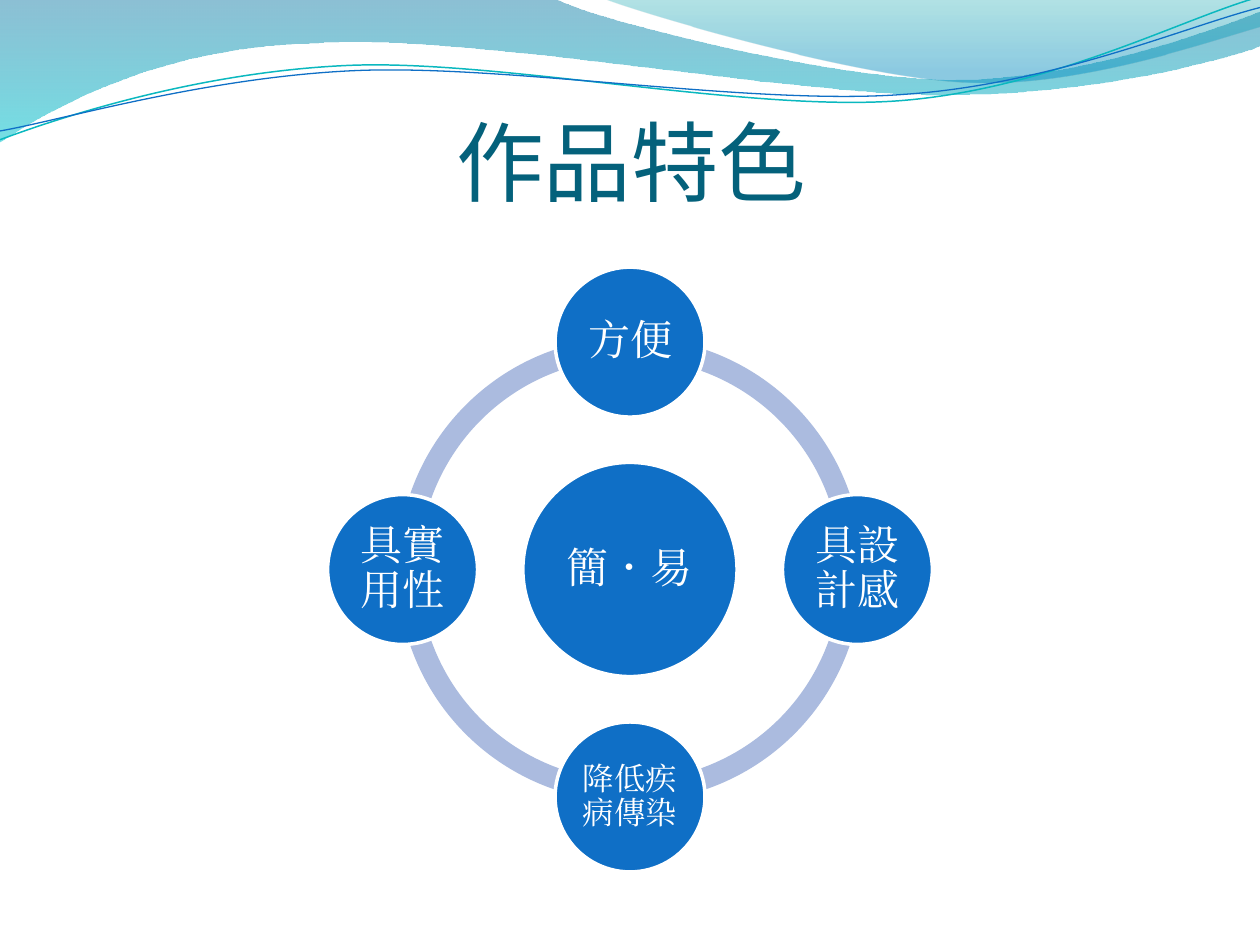
import math

from lxml import etree
from pptx import Presentation
from pptx import util as u
from pptx.dml.color import RGBColor
from pptx.enum import shapes, text
from pptx.oxml import ns

COLORS = {
    "title": "04617B", "node": "0F6FC6", "ring": "ABBBDF", "white": "FFFFFF",
    "teal": "0AB8BF", "wave_top": "0074A1", "wave_bottom": "00C6CF",
    "crest_top": "00A1A9", "crest_bottom": "008BBF",
}
LATIN, CJK = "TeX Gyre Pagella", "Noto Sans CJK SC"
UNITS = 1000  # path units per inch

# Each outline: start point, then lines (x, y) and curves (three points)
WAVE = [(0, 0), (4.4, -0.01), (4.76, 0.17, 6.64, 0.63, 7.58, 0.63),
        (8.53, 0.63, 9.58, 0.26, 10, 0.09), (10.01, 0.36),
        (9.83, 0.44, 8.7, 0.76, 7.46, 0.75), (6.22, 0.75, 3.82, 0.28, 2.57, 0.34),
        (1.29, 0.36, 0.46, 0.83, -0.01, 1.13), (0, 0)]
CREST = [(4.79, -0.01), (5.09, 0.11, 6.82, 0.62, 7.69, 0.65),
         (8.56, 0.69, 9.61, 0.32, 10, 0.21), (10, 0), (4.79, -0.01)]
TEAL_LINE = [(0, 1.11), (0.48, 0.93, 1.58, 0.57, 2.77, 0.52),
             (3.95, 0.47, 5.93, 0.89, 7.13, 0.8), (8.33, 0.71, 9.38, 0.15, 9.98, -0.02)]
BLUE_LINE = [(0, 1.04), (0.47, 0.96, 1.64, 0.61, 2.83, 0.56),
             (4.03, 0.51, 5.97, 0.84, 7.17, 0.75), (8.36, 0.67, 9.41, 0.21, 10, 0.06)]


def rgb(name):
    return RGBColor.from_string(COLORS[name])


def add_outline(page, box, steps, closed, turn=0):
    """Draw page-coordinate curves in a box that is turned by some degrees."""
    left, top, width, height = box
    builder = page.shapes.build_freeform(
        round(left * UNITS), round(top * UNITS), u.Inches(1) / UNITS)
    builder.add_line_segments(
        [(round((left + width) * UNITS), round((top + height) * UNITS))], close=closed)
    shape = builder.convert_to_shape()
    shape.shadow.inherit = False
    shape.rotation = turn
    cos, sin = math.cos(math.radians(-turn)), math.sin(math.radians(-turn))

    def add_point(parent, x, y):
        dx, dy = x - left - width / 2, y - top - height / 2
        point = etree.SubElement(parent, ns.qn("a:pt"))
        point.set("x", str(round((dx * cos - dy * sin + width / 2) * UNITS)))
        point.set("y", str(round((dx * sin + dy * cos + height / 2) * UNITS)))

    # Cubic curves need XML
    outline = next(shape._element.iter(ns.qn("a:path")))
    for child in list(outline):
        outline.remove(child)
    for index, step in enumerate(steps):
        tag = "a:moveTo" if index == 0 else "a:lnTo" if len(step) == 2 else "a:cubicBezTo"
        command = etree.SubElement(outline, ns.qn(tag))
        for x, y in zip(step[::2], step[1::2]):
            add_point(command, x, y)
    if closed:
        etree.SubElement(outline, ns.qn("a:close"))
    return shape


def add_wave(page, box, steps, stops):
    shape = add_outline(page, box, steps, closed=True)
    shape.line.fill.background()
    shape.fill.gradient()
    shape.fill.gradient_angle = 270
    for stop, (color, _, _) in zip(shape.fill.gradient_stops, stops):
        stop.color.rgb = rgb(color)
    # Stop positions and transparency
    for gs, (_, position, opacity) in zip(shape._element.iter(ns.qn("a:gs")), stops):
        gs.set("pos", str(position * 1000))
        etree.SubElement(gs[0], ns.qn("a:alpha")).set("val", str(opacity * 1000))


def add_wave_line(page, box, steps, color, width):
    shape = add_outline(page, box, steps, closed=False, turn=357.3)
    shape.fill.background()
    shape.line.color.rgb = rgb(color)
    shape.line.width = u.Pt(width)


def add_header(page):
    add_wave(page, (-0.01, -0.01, 10.02, 1.14), WAVE,
             [("wave_top", 0, 45), ("wave_bottom", 100, 55)])
    add_wave(page, (4.79, -0.01, 5.21, 0.7), CREST,
             [("crest_top", 0, 30), ("crest_bottom", 80, 45)])
    add_wave_line(page, (-0.02, 0.22, 10.02, 0.71), TEAL_LINE, "teal", 0.85)
    add_wave_line(page, (-0.02, 0.3, 10.03, 0.58), BLUE_LINE, "node", 0.75)


def write(shape, spans, size, color, anchor, insets):
    frame = shape.text_frame
    frame.word_wrap = True
    frame.vertical_anchor = anchor
    (frame.margin_left, frame.margin_top,
     frame.margin_right, frame.margin_bottom) = map(u.Inches, insets)
    para = frame.paragraphs[0]
    para.alignment = text.PP_ALIGN.CENTER
    para.font.size = u.Pt(size)
    para.font.color.rgb = rgb(color)
    for words, font in spans:
        span = para.add_run()
        span.text = words
        span.font.name = font
        props = span._r.get_or_add_rPr()
        props.set("lang", "zh-TW")
        etree.SubElement(props, ns.qn("a:ea")).set("typeface", font)
    return para


def add_title(page, box):
    shape = page.shapes.add_textbox(*map(u.Inches, box))
    write(shape, [("作品特色", CJK)], 50, "title", text.MSO_ANCHOR.BOTTOM, (0, 0.05, 0, 0))


def add_round(page, kind, center_x, center_y, diameter, color):
    shape = page.shapes.add_shape(
        kind, u.Inches(center_x - diameter / 2), u.Inches(center_y - diameter / 2),
        u.Inches(diameter), u.Inches(diameter))
    shape.shadow.inherit = False
    shape.fill.solid()
    shape.fill.fore_color.rgb = rgb(color)
    shape.line.fill.background()
    return shape


def add_node(page, center_x, center_y, diameter, spans, size):
    shape = add_round(page, shapes.MSO_SHAPE.OVAL, center_x, center_y, diameter, "node")
    shape.line.color.rgb = rgb("white")
    shape.line.width = u.Pt(2)
    para = write(shape, spans, size, "white", text.MSO_ANCHOR.MIDDLE, [0.03] * 4)
    para.line_spacing = 0.9


def add_cycle(page, box):
    left, top, width, height = box
    center_x, center_y = left + width / 2, top + height / 2
    node = 1.19
    radius = (width - node) / 2

    # Ring of quarter arcs; angles in units of 100000/60000 degrees
    quarter = 54
    for start in (2, 1, 0, 3):
        arc = add_round(page, shapes.MSO_SHAPE.BLOCK_ARC, center_x, center_y, 3.69, "ring")
        arc.adjustments[0] = start * quarter
        arc.adjustments[1] = (start + 1) % 4 * quarter
        arc.adjustments[2] = 0.046

    # Hub, then nodes clockwise from the top
    add_node(page, center_x, center_y, 1.7,
             [("簡", LATIN), ("．", CJK), ("易", LATIN)], 24)
    labels = [("方便", 24), ("具設計感", 24), ("降低疾病傳染", 18), ("具實用性", 24)]
    for index, (label, size) in enumerate(labels):
        angle = math.radians(index * 90 - 90)
        add_node(page, center_x + radius * math.cos(angle),
                 center_y + radius * math.sin(angle), node, [(label, LATIN)], size)


def main():
    deck = Presentation()
    deck.slide_width, deck.slide_height = u.Inches(10), u.Inches(7.5)
    page = deck.slides.add_slide(deck.slide_layouts[6])
    add_header(page)
    add_title(page, (0.51, 0.44, 9, 1.25))
    add_cycle(page, (2.6, 2.12, 4.8, 4.8))
    deck.save("out.pptx")


if __name__ == "__main__":
    main()
